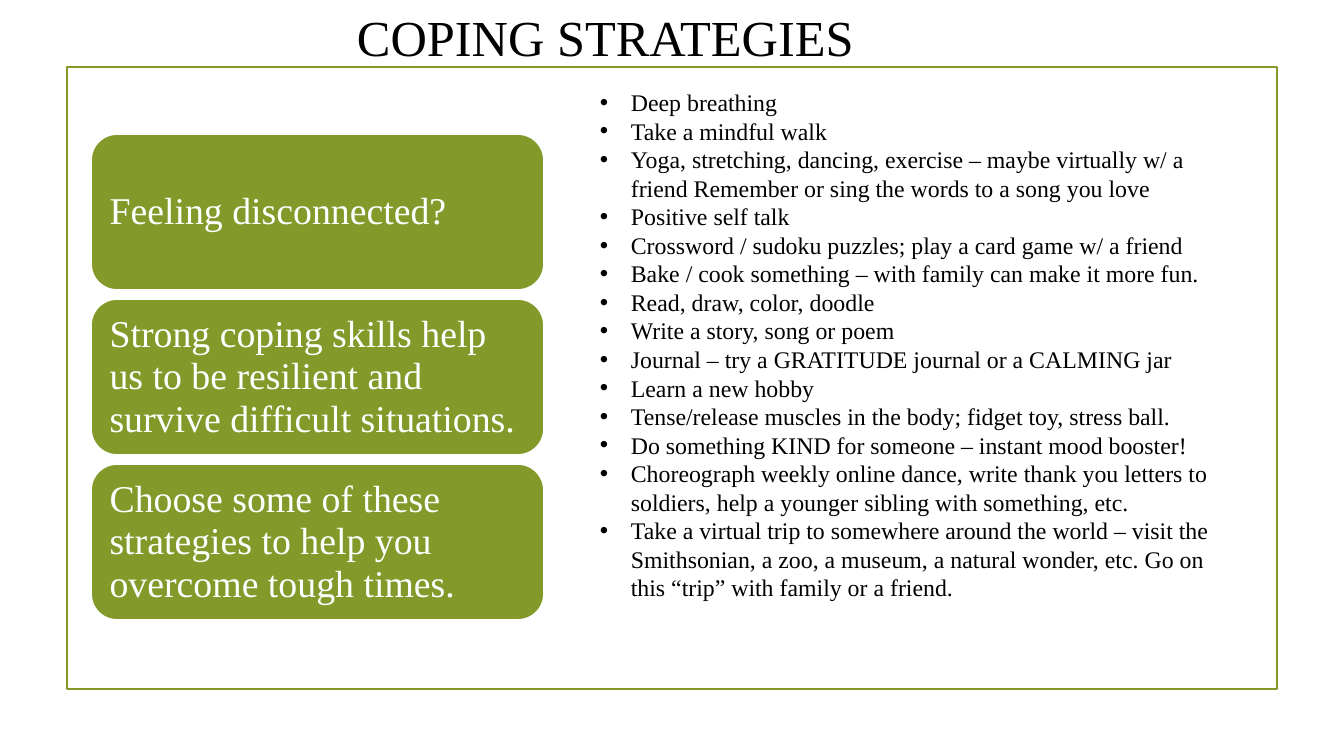
"""Build the coping strategies slide."""
from dataclasses import dataclass

from lxml import etree
from pptx import Presentation
from pptx.dml.color import RGBColor
from pptx.enum.shapes import MSO_SHAPE
from pptx.enum.text import MSO_ANCHOR, MSO_AUTO_SIZE, PP_ALIGN
from pptx.oxml.ns import qn
from pptx.util import Emu, Pt

RECTANGLE = MSO_SHAPE.RECTANGLE
ROUNDED = MSO_SHAPE.ROUNDED_RECTANGLE
MIDDLE, BOTTOM = MSO_ANCHOR.MIDDLE, MSO_ANCHOR.BOTTOM
LEFT, CENTER = PP_ALIGN.LEFT, PP_ALIGN.CENTER
NO_AUTOFIT = MSO_AUTO_SIZE.NONE
EMU_PER_PX = 914400 / 100.8


@dataclass(frozen=True)
class Theme:
    font: str = "Times New Roman"
    green: RGBColor = RGBColor(0x83, 0x99, 0x2A)
    white: RGBColor = RGBColor(0xFF, 0xFF, 0xFF)
    black: RGBColor = RGBColor(0x00, 0x00, 0x00)
    title_size: Pt = Pt(36)
    card_size: Pt = Pt(27)
    list_size: Pt = Pt(17)
    list_spacing: Pt = Pt(20.4)
    line_width: Pt = Pt(1.25)


@dataclass(frozen=True)
class Box:
    left: int
    top: int
    width: int
    height: int


THEME = Theme()
SLIDE = Box(0, 0, 1344, 756)
FRAME = Box(67, 67, 1210, 622)
TITLE = Box(295, 0, 621, 72)
FIRST_CARD = Box(91, 134, 453, 156)
STRATEGY_LIST = Box(590, 83, 651, 559)
CARD_PITCH = 165
CARD_INSET = 11
BULLET_INDENT = 31

CARDS = (
    "Feeling disconnected?",
    "Strong coping skills help us to be resilient and survive difficult situations.",
    "Choose some of these strategies to help you overcome tough times.",
)
STRATEGIES = (
    "Deep breathing",
    "Take a mindful walk",
    "Yoga, stretching, dancing, exercise – maybe virtually w/ a friend "
    "Remember or sing the words to a song you love",
    "Positive self talk",
    "Crossword / sudoku puzzles; play a card game w/ a friend",
    "Bake / cook something – with family can make it more fun.",
    "Read, draw, color, doodle",
    "Write a story, song or poem",
    "Journal – try a GRATITUDE journal or a CALMING jar",
    "Learn a new hobby",
    "Tense/release muscles in the body; fidget toy, stress ball.",
    "Do something KIND for someone – instant mood booster!",
    "Choreograph weekly online dance, write thank you letters to soldiers, "
    "help a younger sibling with something, etc.",
    "Take a virtual trip to somewhere around the world – visit the Smithsonian, "
    "a zoo, a museum, a natural wonder, etc. Go on this “trip” with family or a friend.",
)


def px(length: int) -> Emu:
    """Turn pixels into EMU."""
    return Emu(round(length * EMU_PER_PX))


def edges(box: Box) -> tuple[Emu, Emu, Emu, Emu]:
    """Give left, top, width and height in EMU."""
    return px(box.left), px(box.top), px(box.width), px(box.height)


def apply_format(target, values: dict) -> None:
    """Set each named attribute on the target."""
    for name, value in values.items():
        setattr(target, name, value)


def style_text(paragraph, size: Pt, color: RGBColor, alignment: PP_ALIGN) -> None:
    """Format a paragraph and its font."""
    paragraph.alignment = alignment
    apply_format(paragraph.font, {"name": THEME.font, "size": size, "bold": False})
    paragraph.font.color.rgb = color


def add_bullet(paragraph) -> None:
    """Give a paragraph a hanging round bullet."""
    properties = paragraph._p.get_or_add_pPr()
    indent = px(BULLET_INDENT)
    properties.set("marL", str(indent))
    properties.set("indent", str(-indent))
    etree.SubElement(properties, qn("a:buFont")).set("typeface", "Arial")
    etree.SubElement(properties, qn("a:buChar")).set("char", "•")


def add_outlined_shape(slide, kind: MSO_SHAPE, box: Box, line_color: RGBColor):
    """Add a shape with a thin line and no shadow."""
    shape = slide.shapes.add_shape(kind, *edges(box))
    shape.shadow.inherit = False
    shape.line.color.rgb = line_color
    shape.line.width = THEME.line_width
    return shape


def add_card(slide, text: str, box: Box) -> None:
    """Add a green rounded card with its message."""
    card = add_outlined_shape(slide, ROUNDED, box, THEME.white)
    card.fill.solid()
    card.fill.fore_color.rgb = THEME.green
    inset = px(CARD_INSET)
    apply_format(card.text_frame, {
        "text": text, "word_wrap": True, "vertical_anchor": MIDDLE,
        "margin_left": inset, "margin_right": inset,
        "margin_top": inset, "margin_bottom": inset,
    })
    paragraph = card.text_frame.paragraphs[0]
    paragraph.line_spacing = 0.94
    style_text(paragraph, THEME.card_size, THEME.white, LEFT)


def add_strategy_list(slide) -> None:
    """Add the bulleted list of strategies."""
    frame = slide.shapes.add_textbox(*edges(STRATEGY_LIST)).text_frame
    frame.word_wrap = True
    frame.text = "\n".join(STRATEGIES)
    for paragraph in frame.paragraphs:
        add_bullet(paragraph)
        paragraph.line_spacing = THEME.list_spacing
        style_text(paragraph, THEME.list_size, THEME.black, LEFT)


def format_title(slide) -> None:
    """Place and format the title."""
    title = slide.shapes.title
    left, top, width, height = edges(TITLE)
    apply_format(title, {"left": left, "top": top, "width": width, "height": height})
    apply_format(title.text_frame, {
        "text": "COPING STRATEGIES", "word_wrap": True,
        "auto_size": NO_AUTOFIT, "vertical_anchor": BOTTOM,
    })
    style_text(title.text_frame.paragraphs[0], THEME.title_size, THEME.black, CENTER)


def main() -> None:
    """Build and save the presentation."""
    presentation = Presentation()
    presentation.slide_width = px(SLIDE.width)
    presentation.slide_height = px(SLIDE.height)
    slide = presentation.slides.add_slide(presentation.slide_layouts[5])
    format_title(slide)
    add_outlined_shape(slide, RECTANGLE, FRAME, THEME.green).fill.background()
    for index, text in enumerate(CARDS):
        top = FIRST_CARD.top + index * CARD_PITCH
        add_card(slide, text, Box(FIRST_CARD.left, top, FIRST_CARD.width, FIRST_CARD.height))
    add_strategy_list(slide)
    presentation.save("out.pptx")


if __name__ == "__main__":
    main()
